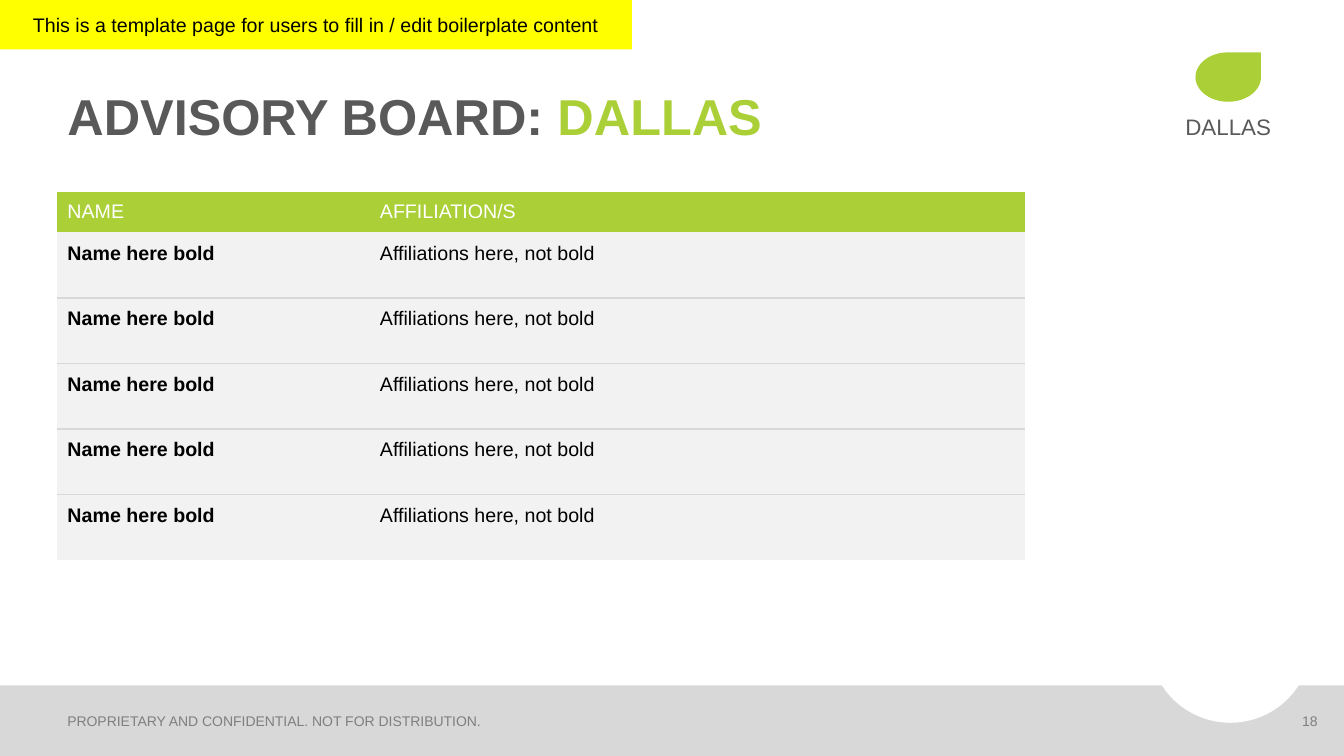
from dataclasses import dataclass
from pptx import Presentation
from pptx.dml.color import RGBColor as Rgb
from pptx.enum.shapes import MSO_SHAPE as Kind
from pptx.enum.text import MSO_ANCHOR as Anchor, MSO_AUTO_SIZE as Fit, PP_ALIGN as Align
from pptx.oxml import parse_xml
from pptx.oxml.ns import nsdecls
from pptx.util import Pt


@dataclass(frozen=True)
class Theme:
    font: str = "Arial"
    green: str = "AACF37"
    dark: str = "595959"
    mid: str = "7F7F7F"
    band: str = "D8D8D8"
    pale: str = "F2F2F2"
    white: str = "FFFFFF"
    black: str = "000000"
    yellow: str = "FFFF00"
    head: int = 36
    label: int = 16
    body: int = 14
    small: int = 10


def put(frame, text, size, color, font, bold=False, align=Align.LEFT,
        anchor=Anchor.MIDDLE, pad=3.6):
    frame.word_wrap = True
    frame.auto_size = Fit.NONE
    frame.vertical_anchor = anchor
    frame.margin_left = frame.margin_right = Pt(7.2)
    frame.margin_top = frame.margin_bottom = Pt(pad)
    line = frame.paragraphs[0]
    line.alignment = align
    run = line.add_run()
    run.text = text
    run.font.name = font
    run.font.size = Pt(size)
    run.font.bold = bold
    run.font.color.rgb = Rgb.from_string(color)
    return line


class Page:
    def __init__(self, slide, theme):
        self.slide = slide
        self.theme = theme

    def title(self, box, parts):
        t = self.theme
        shape = self.slide.shapes.title
        shape.left, shape.top, shape.width, shape.height = map(Pt, box)
        for text, color in parts:
            line = put(shape.text_frame, text, t.head, color, t.font, bold=True,
                       anchor=Anchor.BOTTOM)
        line.line_spacing = 0.9

    def shape(self, kind, box, color):
        shape = self.slide.shapes.add_shape(kind, *map(Pt, box))
        shape.shadow.inherit = False
        shape.fill.solid()
        shape.fill.fore_color.rgb = Rgb.from_string(color)
        shape.line.fill.background()
        return shape

    def text(self, box, text, size, color, **style):
        shape = self.slide.shapes.add_textbox(*map(Pt, box))
        put(shape.text_frame, text, size, color, self.theme.font, **style)

    def note(self, box, text):
        t = self.theme
        shape = self.shape(Kind.RECTANGLE, box, t.yellow)
        put(shape.text_frame, text, t.body, t.black, t.font, align=Align.CENTER)

    def cell(self, cell, text, fill, color, **style):
        t = self.theme
        cell.fill.solid()
        cell.fill.fore_color.rgb = Rgb.from_string(fill)
        pad = style.get("pad", 3.6)
        cell.margin_left = cell.margin_right = Pt(7.2)
        cell.margin_top = cell.margin_bottom = Pt(pad)
        cell.vertical_anchor = style.pop("anchor", Anchor.MIDDLE)
        line = cell.text_frame.paragraphs[0]
        run = line.add_run()
        run.text = text
        run.font.name = t.font
        run.font.size = Pt(t.body)
        run.font.bold = style.get("bold", False)
        run.font.color.rgb = Rgb.from_string(color)

    def rule(self, cell, side):
        cell._tc.get_or_add_tcPr().insert(0, parse_xml(
            f'<a:{side} {nsdecls("a")} w="12700"><a:solidFill>'
            f'<a:srgbClr val="{self.theme.band}"/></a:solidFill></a:{side}>'))

    def table(self, left, top, cols, rows, data):
        t = self.theme
        frame = self.slide.shapes.add_table(
            len(rows), len(cols), *map(Pt, (left, top, sum(cols), sum(rows))))
        frame.element.xpath(".//a:tableStyleId")[0].text = \
            "{2D5ABB26-0587-4C30-8999-92F81FD0307C}"
        grid = frame.table
        for col, width in zip(grid.columns, cols):
            col.width = Pt(width)
        for r, (height, texts) in enumerate(zip(rows, data)):
            grid.rows[r].height = Pt(height)
            for c, text in enumerate(texts):
                cell = grid.cell(r, c)
                if r == 0:
                    self.cell(cell, text, t.green, t.white)
                    continue
                self.cell(cell, text, t.pale, t.black, bold=c == 0,
                          anchor=Anchor.TOP, pad=7.2)
                if r > 1:
                    self.rule(cell, "lnT")
                if r < len(rows) - 1:
                    self.rule(cell, "lnB")


def main():
    deck = Presentation()
    deck.slide_width, deck.slide_height = Pt(960), Pt(540)
    t = Theme()
    page = Page(deck.slides.add_slide(deck.slide_layouts[5]), t)
    left = 41

    page.shape(Kind.RECTANGLE, (0, 489.6, 960, 50.4), t.band)
    page.shape(Kind.OVAL, (820.8, 400.3, 116, 116), t.white)
    page.title((left, 21.6, 878.4, 86.4),
               [("ADVISORY BOARD: ", t.dark), ("DALLAS", t.green)])
    page.text((left, 504.7, 648, 20.2),
              "PROPRIETARY AND CONFIDENTIAL. NOT FOR DISTRIBUTION.", t.small, t.mid)
    page.text((907.9, 504.7, 40.3, 20.2), "18", t.small, t.mid, align=Align.RIGHT)
    page.table(left, 136.8, [223.2, 468], [29.2] + [46.8] * 5,
               [("NAME", "AFFILIATION/S")]
               + [("Name here bold", "Affiliations here, not bold")] * 5)
    page.note((0, 0, 451.4, 35.3),
              "This is a template page for users to fill in / edit boilerplate content")
    page.shape(Kind.TEAR, (853.9, 37.4, 46.8, 35.3), t.green)
    page.text((811.4, 77, 131.8, 23), "DALLAS", t.label, t.dark,
              align=Align.CENTER, anchor=Anchor.TOP)
    deck.save("out.pptx")


if __name__ == "__main__":
    main()
